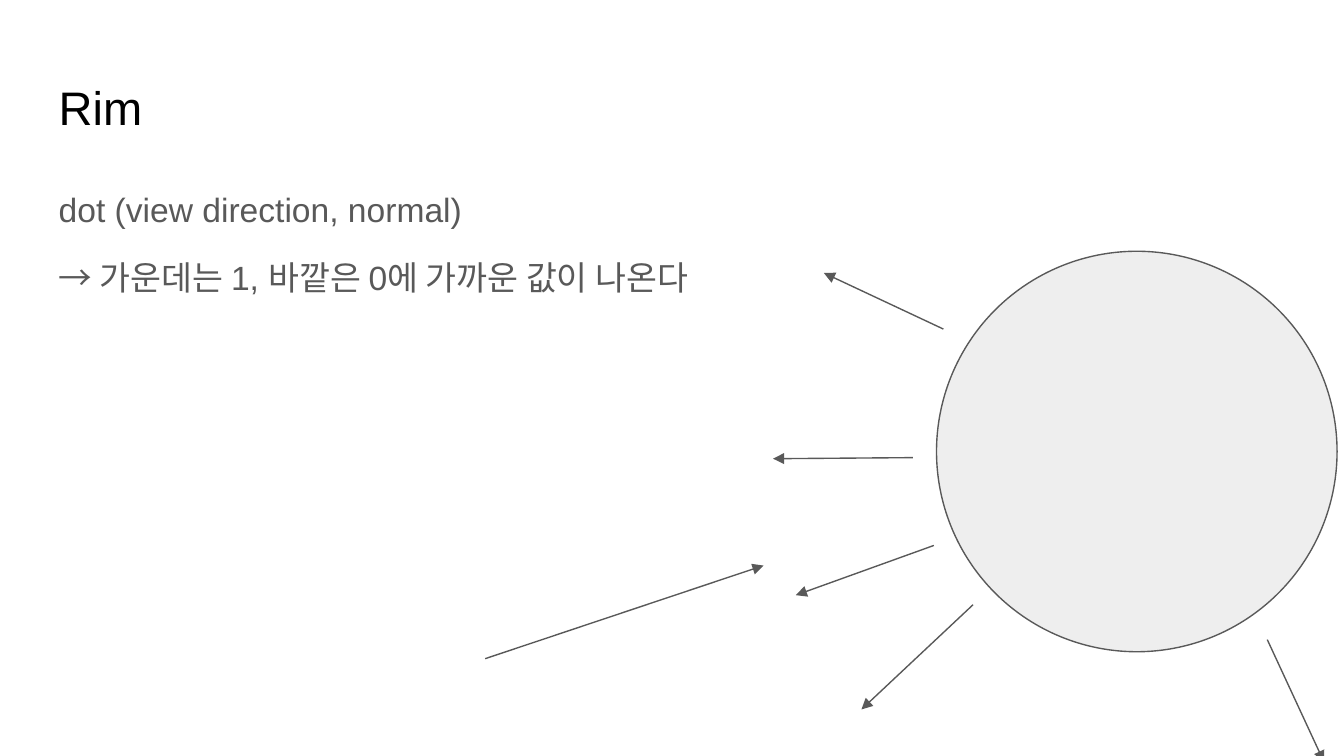
from dataclasses import dataclass

from lxml.etree import SubElement
from pptx import Presentation
from pptx.dml.color import RGBColor
from pptx.enum.shapes import MSO_CONNECTOR, MSO_SHAPE
from pptx.enum.text import MSO_ANCHOR, MSO_AUTO_SIZE, PP_ALIGN
from pptx.oxml.ns import qn
from pptx.util import Cm, Pt


@dataclass(frozen=True)
class Theme:
    font: str = "Arial"
    title_size: float = 25.2
    body_size: float = 18
    line_width: float = 0.75
    title_color: RGBColor = RGBColor(0x00, 0x00, 0x00)
    dark: RGBColor = RGBColor(0x59, 0x59, 0x59)
    light: RGBColor = RGBColor(0xEE, 0xEE, 0xEE)


THEME = Theme()

TITLE_BOX = (0.86, 1.24, 23.67, 1.6)
BODY_BOX = (0.86, 3.2, 23.67, 9.5)
SPHERE_BOX = (17.7, 4.75, 7.57, 7.57)

BODY_LINES = [
    ("dot (view direction, normal)", {"line_spacing": 1.15, "space_before": Pt(0)}),
    (
        "→ 가운데는 1, 바깥은 0에 가까운 값이 나온다",
        {"line_spacing": 1.15, "space_before": Pt(12), "space_after": Pt(12)},
    ),
]

NORMAL_ARROWS = [
    ((17.25, 8.65), (14.61, 8.67)),
    ((18.39, 11.43), (16.28, 13.41)),
    ((17.65, 10.31), (15.04, 11.25)),
    ((17.83, 6.22), (15.57, 5.16)),
    ((23.95, 12.09), (25.02, 14.4)),
]
VIEW_ARROW = ((9.17, 12.45), (14.43, 10.69))


def apply_format(target, values):
    for name, value in values.items():
        setattr(target, name, value)


def place_placeholder(placeholder, box):
    names = ("left", "top", "width", "height")
    apply_format(placeholder, dict(zip(names, map(Cm, box))))
    margins = ("margin_left", "margin_top", "margin_right", "margin_bottom")
    frame_format = dict.fromkeys(margins, Cm(0.25))
    frame_format |= {
        "word_wrap": True,
        "auto_size": MSO_AUTO_SIZE.NONE,
        "vertical_anchor": MSO_ANCHOR.TOP,
    }
    apply_format(placeholder.text_frame, frame_format)


def write_paragraph(paragraph, text, size, color, paragraph_format):
    run = paragraph.add_run()
    run.text = text
    apply_format(run.font, {"name": THEME.font, "size": Pt(size)})
    run.font.color.rgb = color
    apply_format(paragraph, {"alignment": PP_ALIGN.LEFT} | paragraph_format)


def remove_bullet(paragraph):
    properties = paragraph._p.get_or_add_pPr()
    properties.set("marL", "0")
    properties.set("indent", "0")
    SubElement(properties, qn("a:buNone"))


def fill_title(title):
    place_placeholder(title, TITLE_BOX)
    paragraph = title.text_frame.paragraphs[0]
    write_paragraph(paragraph, "Rim", THEME.title_size, THEME.title_color, {})


def fill_body(body):
    place_placeholder(body, BODY_BOX)
    frame = body.text_frame
    for index, (text, paragraph_format) in enumerate(BODY_LINES):
        paragraph = frame.add_paragraph() if index else frame.paragraphs[0]
        write_paragraph(paragraph, text, THEME.body_size, THEME.dark, paragraph_format)
        remove_bullet(paragraph)


def style_line(line):
    line.color.rgb = THEME.dark
    line.width = Pt(THEME.line_width)


def add_sphere(shapes):
    sphere = shapes.add_shape(MSO_SHAPE.FLOWCHART_CONNECTOR, *map(Cm, SPHERE_BOX))
    sphere.shadow.inherit = False
    sphere.fill.solid()
    sphere.fill.fore_color.rgb = THEME.light
    style_line(sphere.line)


def add_arrow(shapes, start, end):
    arrow = shapes.add_connector(MSO_CONNECTOR.STRAIGHT, *map(Cm, start + end))
    style_line(arrow.line)
    SubElement(arrow.line._get_or_add_ln(), qn("a:tailEnd"), type="triangle")
    SubElement(arrow._element.spPr, qn("a:effectLst"))


def main():
    presentation = Presentation()
    presentation.slide_width = Cm(25.4)
    presentation.slide_height = Cm(14.29)
    slide = presentation.slides.add_slide(presentation.slide_layouts[1])

    fill_title(slide.shapes.title)
    fill_body(slide.placeholders[1])

    diagram = slide.shapes.add_group_shape()
    add_sphere(diagram.shapes)
    for start, end in [*NORMAL_ARROWS, VIEW_ARROW]:
        add_arrow(diagram.shapes, start, end)

    presentation.save("out.pptx")


if __name__ == "__main__":
    main()
